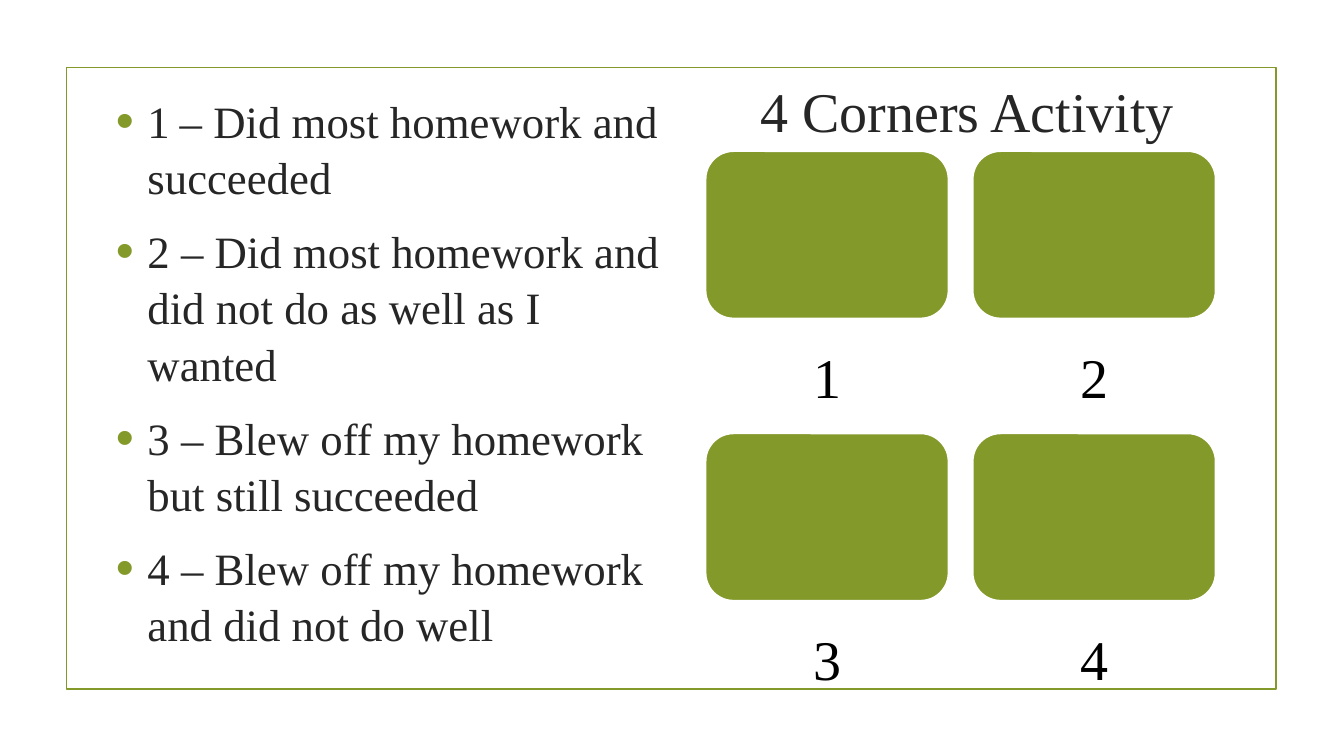
"""Build the 4 Corners Activity slide."""
from lxml.etree import SubElement
from pptx import Presentation
from pptx.dml.color import RGBColor
from pptx.enum.shapes import MSO_SHAPE
from pptx.enum.text import MSO_ANCHOR, MSO_AUTO_SIZE, PP_ALIGN
from pptx.oxml.ns import qn
from pptx.util import Pt

GREEN = RGBColor(0x83, 0x99, 0x2A)
WHITE = RGBColor(0xFF, 0xFF, 0xFF)
BLACK = RGBColor(0, 0, 0)
CHARCOAL = RGBColor(0x26, 0x26, 0x26)
FONT = "Times New Roman"

TITLE = "4 Corners Activity"
CHOICES = [
    [("1", 32), (" ", 28), ("– Did most homework and succeeded", 32)],
    [("2 – Did most homework and did not do as well as I wanted", 32)],
    [("3 – Blew off my homework but still succeeded", 32)],
    [("4 – Blew off my homework and did not do well", 32)],
]
CORNERS = [["1", "2"], ["3", "4"]]

FRAME = (47.5, 48.2, 864, 444.2)
TITLE_AREA = (480.2, 49.7, 421.2, 53.3)
BODY_AREA = (75.6, 61.2, 404.6, 415.4)
GRID_LEFT, GRID_TOP = 504, 108
CARD_WIDTH, CARD_HEIGHT, LABEL_HEIGHT = 173.5, 119.5, 64
COLUMN_STEP, ROW_STEP = 190.8, 201.6
LABEL_INSET = 22.3

TITLE_FRAME = {"margin_bottom": 0, "vertical_anchor": MSO_ANCHOR.BOTTOM,
               "auto_size": MSO_AUTO_SIZE.NONE, "word_wrap": True}
BODY_FRAME = {"vertical_anchor": MSO_ANCHOR.TOP,
              "auto_size": MSO_AUTO_SIZE.NONE, "word_wrap": True}
LABEL_FRAME = {"margin_left": Pt(LABEL_INSET), "margin_right": Pt(LABEL_INSET),
               "margin_top": Pt(LABEL_INSET), "margin_bottom": 0,
               "vertical_anchor": MSO_ANCHOR.TOP, "word_wrap": True}
BULLET = {"a:buClr": {}, "a:buSzPct": {"val": "115000"},
          "a:buFont": {"typeface": "Arial"}, "a:buChar": {"char": "•"}}


def apply(target, values):
    for name, value in values.items():
        setattr(target, name, value)


def place(shape, area):
    apply(shape, dict(zip(("left", "top", "width", "height"), map(Pt, area))))


def add_span(para, text, size, color):
    span = para.add_run()
    span.text = text
    apply(span.font, {"name": FONT, "size": Pt(size)})
    span.font.color.rgb = color


def add_bullet(para):
    properties = para._p.get_or_add_pPr()
    properties.set("marL", str(Pt(22.5)))
    properties.set("indent", str(-Pt(22.5)))
    for tag, attributes in BULLET.items():
        element = SubElement(properties, qn(tag), attributes)
        if tag == "a:buClr":
            SubElement(element, qn("a:srgbClr"), {"val": str(GREEN)})


def add_box(page, kind, area, line_color, fill_color=None):
    box = page.shapes.add_shape(kind, *map(Pt, area))
    box.shadow.inherit = False
    if fill_color is None:
        box.fill.background()
    else:
        box.fill.solid()
        box.fill.fore_color.rgb = fill_color
    box.line.color.rgb = line_color
    box.line.width = Pt(1.25)


def add_corner(page, left, top, number):
    add_box(page, MSO_SHAPE.ROUNDED_RECTANGLE,
            (left, top, CARD_WIDTH, CARD_HEIGHT), WHITE, GREEN)
    label = page.shapes.add_textbox(
        *map(Pt, (left, top + CARD_HEIGHT, CARD_WIDTH, LABEL_HEIGHT)))
    apply(label.text_frame, LABEL_FRAME)
    para = label.text_frame.paragraphs[0]
    apply(para, {"alignment": PP_ALIGN.CENTER, "line_spacing": 0.9})
    add_span(para, number, 40, BLACK)


def main():
    deck = Presentation()
    apply(deck, {"slide_width": Pt(960), "slide_height": Pt(540)})
    page = deck.slides.add_slide(deck.slide_layouts[1])
    add_box(page, MSO_SHAPE.RECTANGLE, FRAME, GREEN)

    title, body = page.shapes.title, page.placeholders[1]
    place(title, TITLE_AREA)
    apply(title.text_frame, TITLE_FRAME)
    heading = title.text_frame.paragraphs[0]
    heading.alignment = PP_ALIGN.CENTER
    add_span(heading, TITLE, 40, CHARCOAL)

    place(body, BODY_AREA)
    apply(body.text_frame, BODY_FRAME)
    for index, choice in enumerate(CHOICES):
        para = body.text_frame.add_paragraph() if index else body.text_frame.paragraphs[0]
        add_bullet(para)
        apply(para, {"space_before": Pt(6.4 if index else 0),
                     "space_after": Pt(6), "line_spacing": 1.05})
        for text, size in choice:
            add_span(para, text, size, CHARCOAL)

    for row, numbers in enumerate(CORNERS):
        for column, number in enumerate(numbers):
            add_corner(page, GRID_LEFT + column * COLUMN_STEP,
                       GRID_TOP + row * ROW_STEP, number)
    deck.save("out.pptx")


if __name__ == "__main__":
    main()
